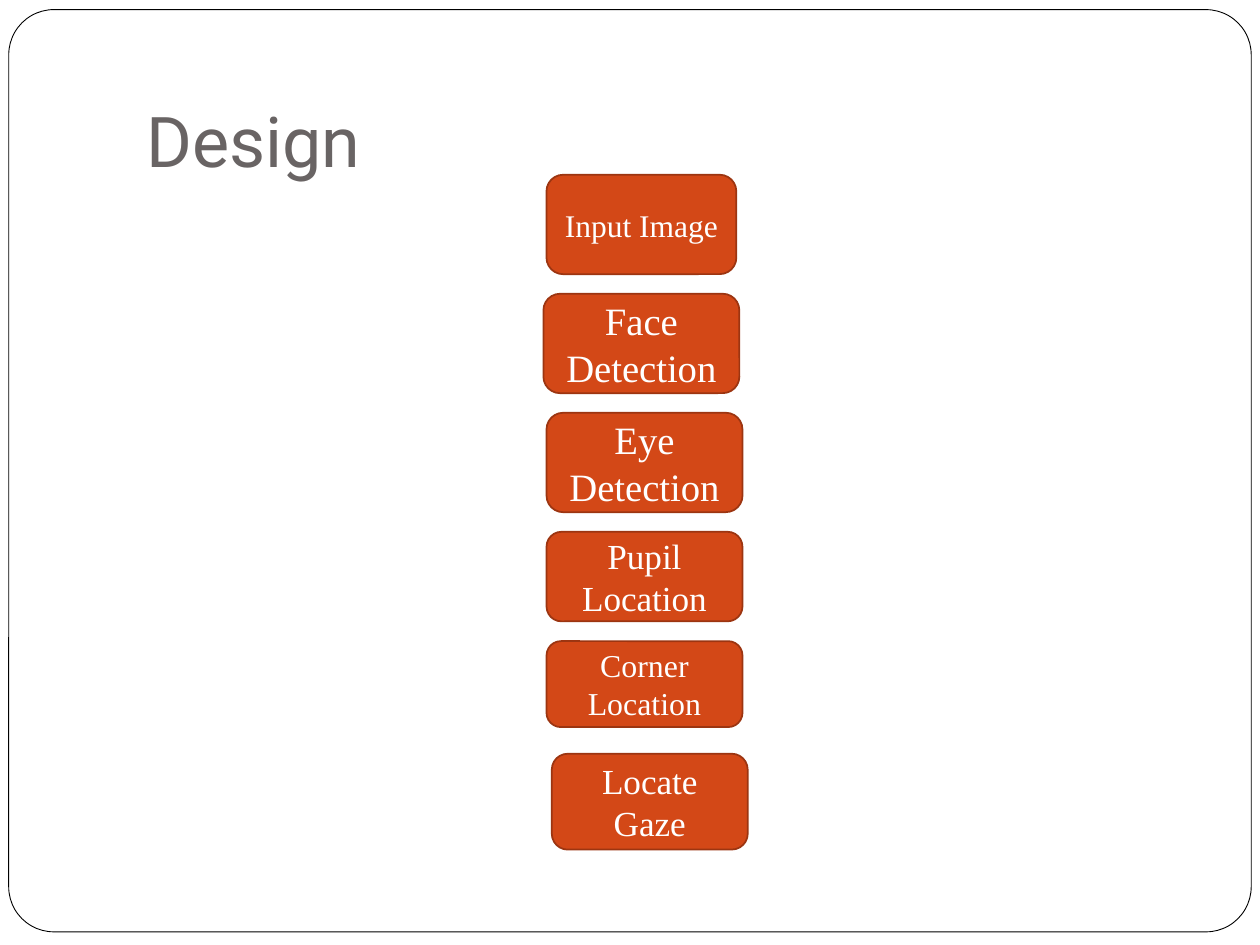
from dataclasses import dataclass

from pptx import Presentation
from pptx.dml.color import RGBColor
from pptx.enum.shapes import MSO_SHAPE
from pptx.enum.text import MSO_ANCHOR, PP_ALIGN
from pptx.util import Pt

ROUND_RECT = MSO_SHAPE.ROUNDED_RECTANGLE
MIDDLE, BOTTOM = MSO_ANCHOR.MIDDLE, MSO_ANCHOR.BOTTOM
LEFT, CENTER = PP_ALIGN.LEFT, PP_ALIGN.CENTER
TITLE_ONLY = 5


@dataclass(frozen=True)
class Theme:
    paper: str = "FFFFFF"
    frame: str = "000000"
    title: str = "696464"
    step: str = "D34817"
    step_line: str = "9C3511"
    step_text: str = "FFFFFF"
    title_font: str = "Roboto"
    step_font: str = "Times New Roman"
    title_size: float = 40
    large: float = 22.1
    medium: float = 20.1
    small: float = 18.2
    smallest: float = 18


class Deck:
    """Holds the theme and the current slide."""

    def __init__(self, prs, theme):
        self.theme = theme
        self.s = prs.slides.add_slide(prs.slide_layouts[TITLE_ONLY])

    def set_text(self, sp, text, font, size, color, align, anchor):
        tf = sp.text_frame
        tf.text = text
        tf.word_wrap = True
        tf.vertical_anchor = anchor
        p = tf.paragraphs[0]
        p.alignment = align
        r = p.runs[0]
        r.font.name = font
        r.font.size = Pt(size)
        r.font.color.rgb = RGBColor.from_string(color)
        return p

    def title(self, text, x, y, w, h):
        t, sp = self.theme, self.s.shapes.title
        sp.left, sp.top, sp.width, sp.height = Pt(x), Pt(y), Pt(w), Pt(h)
        self.set_text(sp, text, t.title_font, t.title_size, t.title, LEFT, BOTTOM)
        sp.text_frame.margin_bottom = Pt(7.2)

    def box(self, x, y, w, h, fill, line, weight):
        sp = self.s.shapes.add_shape(ROUND_RECT, Pt(x), Pt(y), Pt(w), Pt(h))
        sp.shadow.inherit = False
        sp.fill.solid()
        sp.fill.fore_color.rgb = RGBColor.from_string(fill)
        sp.line.color.rgb = RGBColor.from_string(line)
        sp.line.width = Pt(weight)
        return sp

    def frame(self, x, y, w, h):
        sp = self.box(x, y, w, h, self.theme.paper, self.theme.frame, 0.5)
        sp.adjustments[0] = 0.049
        # The frame lies behind the title
        self.s.shapes.title.element.addprevious(sp.element)

    def step(self, text, size, x, y, w, h, before):
        t = self.theme
        sp = self.box(x, y, w, h, t.step, t.step_line, 1)
        p = self.set_text(sp, text, t.step_font, size, t.step_text, CENTER, MIDDLE)
        p.space_before = Pt(before)


def main():
    prs = Presentation()
    prs.slide_width, prs.slide_height = Pt(720), Pt(540)
    theme = Theme()
    deck = Deck(prs, theme)

    # Page frame and title
    deck.frame(5, 5.5, 710, 527)
    deck.title("Design", 76.5, 21, 612, 90)

    # Processing steps, top to bottom: text, size, left, top, width, height, space before
    steps = [
        ("Input Image", theme.smallest, 312.3, 99.9, 108.5, 56.8, 0),
        ("Face Detection", theme.large, 310.5, 167.9, 112, 56.8, 5.8),
        ("Eye Detection", theme.large, 312.3, 235.9, 112, 56.8, 5.8),
        ("Pupil Location", theme.medium, 312.3, 303.9, 112, 51.2, 5.8),
        ("Corner Location", theme.small, 312.3, 366.4, 112, 49.1, 5.8),
        ("Locate Gaze", theme.medium, 315.3, 430.7, 112, 54.8, 5.8),
    ]
    for step in steps:
        deck.step(*step)

    prs.save("out.pptx")


if __name__ == "__main__":
    main()
